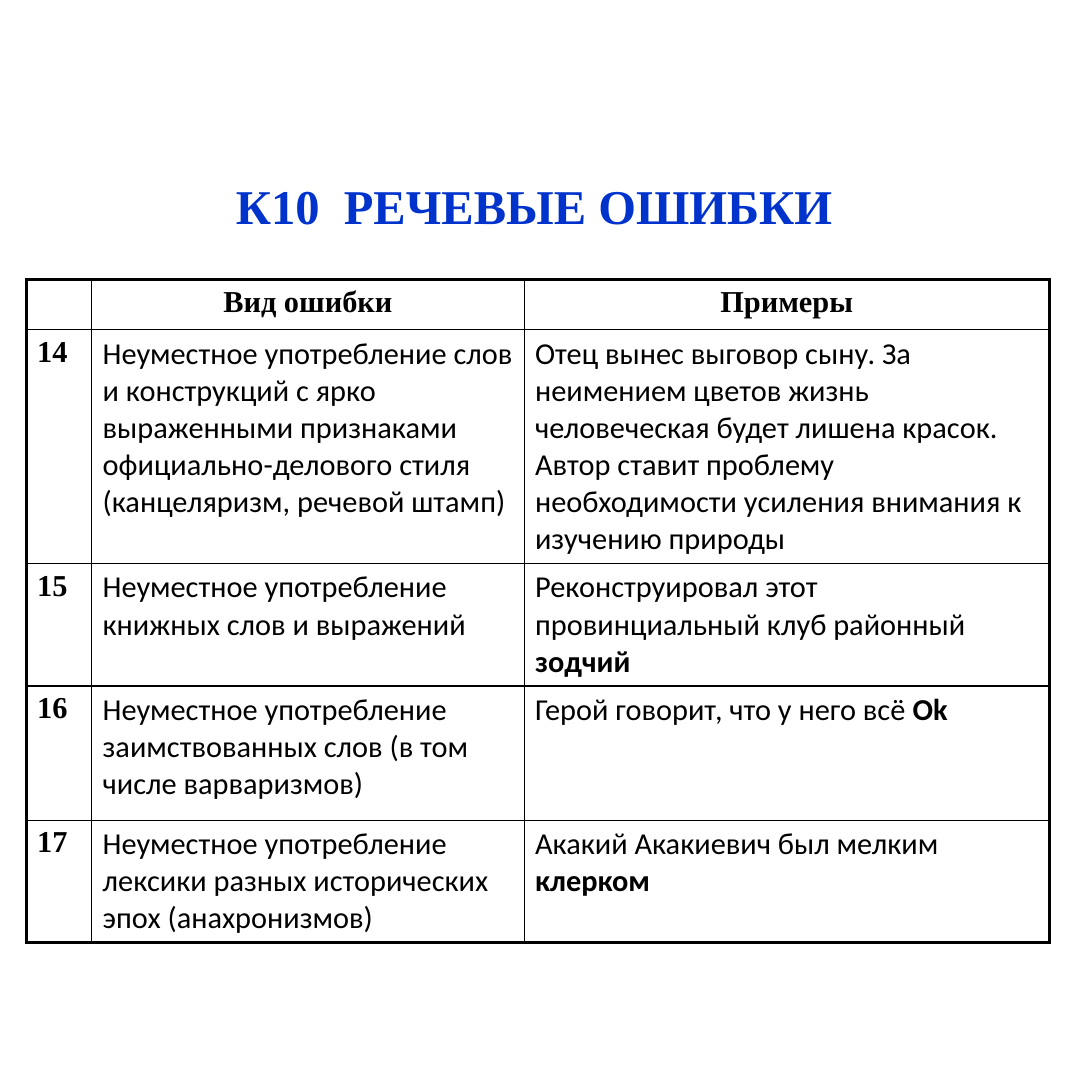
import pptx
import pptx.dml.color
import pptx.enum.text
import pptx.oxml
import pptx.util
from pptx.util import Inches

BLACK = pptx.dml.color.RGBColor(0, 0, 0)
BLUE = pptx.dml.color.RGBColor(0x00, 0x33, 0xCC)
SERIF = "Times New Roman"
SANS = "Calibri"
THICK, THIN = 2.25, 1
COLUMN_WIDTHS = [0.6, 3.96, 4.81]
ROW_HEIGHTS = [0.46, 1.19, 1.07, 1.23, 0.88]
HEADER = ("", "Вид ошибки", "Примеры", "")
ERRORS = [
    ("14", "Неуместное употребление слов и конструкций с ярко выраженными "
     "признаками официально-делового стиля (канцеляризм, речевой штамп)",
     "Отец вынес выговор сыну. За неимением цветов жизнь человеческая будет "
     "лишена красок. Автор ставит проблему необходимости усиления внимания "
     "к изучению природы", ""),
    ("15", "Неуместное употребление книжных слов и выражений",
     "Реконструировал этот провинциальный клуб районный ", "зодчий"),
    ("16", "Неуместное употребление заимствованных слов (в том числе варваризмов)",
     "Герой говорит, что у него всё ", "Ok"),
    ("17", "Неуместное употребление лексики разных исторических эпох (анахронизмов)",
     "Акакий Акакиевич был мелким ", "клерком"),
]


def format_font(font, name, size, bold, color):
    font.name = name
    font.size = pptx.util.Pt(size)
    font.bold = bold
    font.color.rgb = color


def add_title(s, left, top, width, height):
    sp = s.shapes.title
    sp.left, sp.top, sp.width, sp.height = map(Inches, (left, top, width, height))
    tf = sp.text_frame
    tf.text = "К10  РЕЧЕВЫЕ ОШИБКИ"
    tf.margin_left = tf.margin_top = tf.margin_right = tf.margin_bottom = 0
    tf.vertical_anchor = pptx.enum.text.MSO_ANCHOR.TOP
    tf.auto_size = pptx.enum.text.MSO_AUTO_SIZE.NONE
    p = tf.paragraphs[0]
    p.alignment = pptx.enum.text.PP_ALIGN.LEFT
    format_font(p.runs[0].font, SERIF, 32, True, BLUE)


def set_borders(cell, widths):
    tc_pr = cell._tc.get_or_add_tcPr()
    for i, (side, width) in enumerate(zip("LRTB", widths)):
        tc_pr.insert(i, pptx.oxml.parse_xml(
            f'<a:ln{side} xmlns:a="http://schemas.openxmlformats.org/drawingml/2006/main"'
            f' w="{pptx.util.Pt(width)}"><a:solidFill><a:srgbClr val="{BLACK}"/>'
            f'</a:solidFill></a:ln{side}>'))


def fill_cell(cell, text, bold_end, is_header, is_strong):
    cell.fill.background()
    p = cell.text_frame.paragraphs[0]
    p.text = text
    if is_header:
        p.alignment = pptx.enum.text.PP_ALIGN.CENTER
    if bold_end:
        p.add_run().text = bold_end
    for r in p.runs:
        format_font(r.font, SERIF if is_strong else SANS, 20,
                    is_strong or r.text == bold_end, BLACK)


def add_error_table(s, left, top, width, height):
    rows = [HEADER] + ERRORS
    last_row, last_col = len(rows) - 1, len(COLUMN_WIDTHS) - 1
    frame = s.shapes.add_table(len(rows), len(COLUMN_WIDTHS),
                               *map(Inches, (left, top, width, height)))
    table = frame.table
    table.first_row = table.horz_banding = False
    for column, column_width in zip(table.columns, COLUMN_WIDTHS):
        column.width = Inches(column_width)
    for row, row_height in zip(table.rows, ROW_HEIGHTS):
        row.height = Inches(row_height)
    frame.height = Inches(height)
    for i, (*texts, bold_end) in enumerate(rows):
        for j, text in enumerate(texts):
            cell = table.cell(i, j)
            fill_cell(cell, text, bold_end if j == last_col else "",
                      i == 0, i == 0 or j == 0)
            outer = (j == 0, j == last_col, i == 0, i == last_row)
            set_borders(cell, [THICK if edge else THIN for edge in outer])


def main():
    prs = pptx.Presentation()
    prs.slide_width = prs.slide_height = Inches(10)
    s = prs.slides.add_slide(prs.slide_layouts[5])
    add_title(s, 2.16, 1.61, 7.48, 0.94)
    add_error_table(s, 0.24, 2.56, 9.37, 6.32)
    prs.save("out.pptx")


if __name__ == "__main__":
    main()
